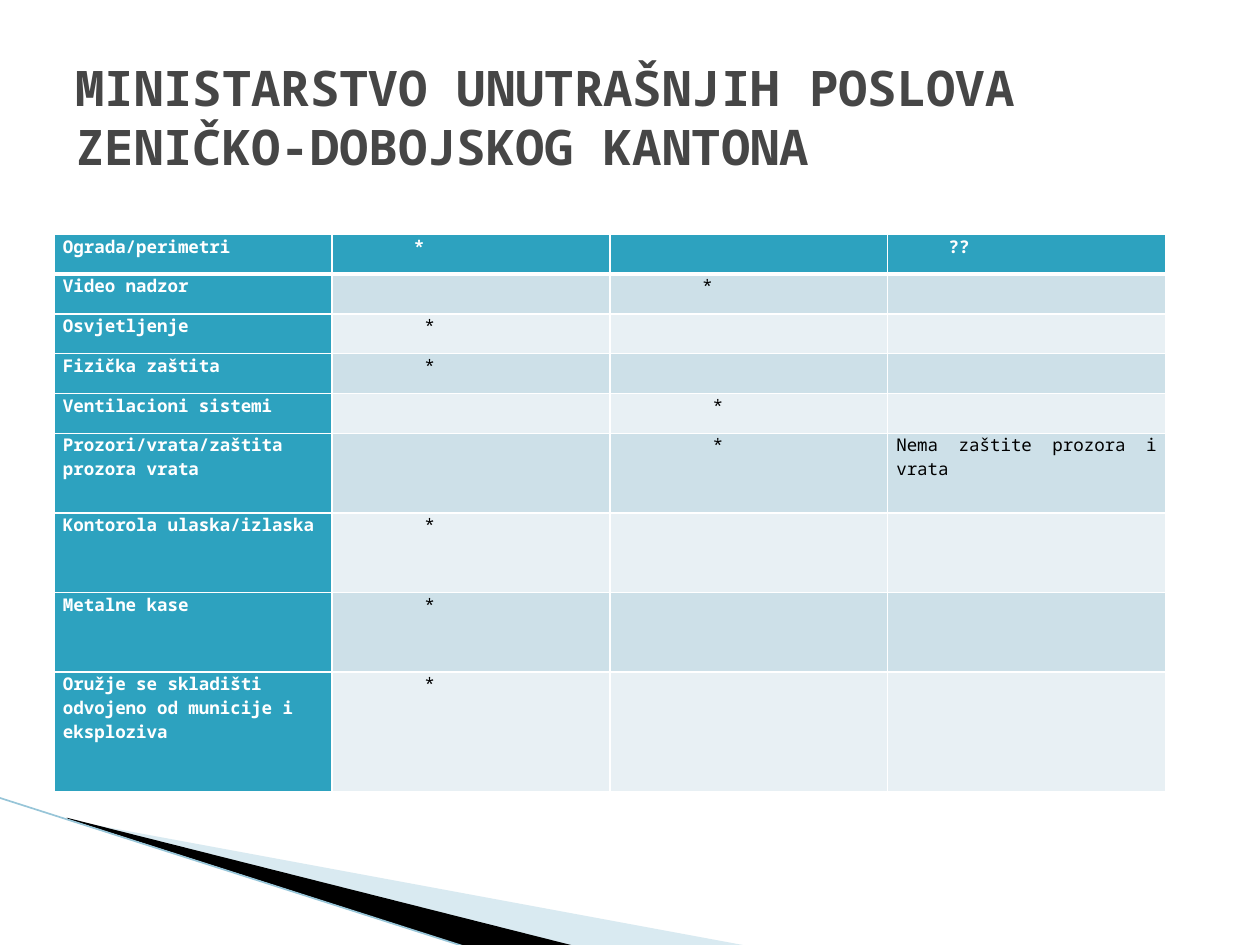
import lxml.etree
import pptx
import pptx.dml.color
import pptx.enum.shapes
import pptx.enum.text
import pptx.oxml.ns
import pptx.util

Inches = pptx.util.Inches
FONT = "Noto Sans Mono"
TEAL, WHITE, BLACK = "2DA2BF", "FFFFFF", "000000"
BANDS = ["E8F0F4", "CDE0E8"]


def color(value):
    return pptx.dml.color.RGBColor.from_string(value)


def add_border(cell, side, width):
    """Add a white border, width in points, on side L, R, T or B."""
    properties = cell._tc.get_or_add_tcPr()
    line = lxml.etree.SubElement(
        properties, pptx.oxml.ns.qn("a:ln" + side), w=str(pptx.util.Pt(width)))
    fill = lxml.etree.SubElement(line, pptx.oxml.ns.qn("a:solidFill"))
    lxml.etree.SubElement(fill, pptx.oxml.ns.qn("a:srgbClr"), val=WHITE)


presentation = pptx.Presentation()
presentation.slide_width = Inches(10)
presentation.slide_height = Inches(7.5)
slide = presentation.slides.add_slide(presentation.slide_layouts[6])

# Corner decoration
wedges = [
    ("A0CBDC", 40, [(0.55, 6.51), (5.95, 7.51), (4.56, 7.51), (0.55, 6.5)]),
    (BLACK, 100, [(0.53, 6.49), (4.57, 7.51), (3.72, 7.52), (0.54, 6.5)]),
]
for fill_color, opacity, points in wedges:
    corners = [(Inches(x), Inches(y)) for x, y in points]
    builder = slide.shapes.build_freeform(*corners[0])
    builder.add_line_segments(corners[1:])
    wedge = builder.convert_to_shape()
    wedge.shadow.inherit = False
    wedge.fill.solid()
    wedge.fill.fore_color.rgb = color(fill_color)
    wedge.line.fill.background()
    if opacity < 100:
        fill_element = wedge._element.spPr.find(".//" + pptx.oxml.ns.qn("a:srgbClr"))
        lxml.etree.SubElement(
            fill_element, pptx.oxml.ns.qn("a:alpha"), val=str(opacity * 1000))

edge = slide.shapes.add_connector(
    pptx.enum.shapes.MSO_CONNECTOR.STRAIGHT,
    Inches(-0.01), Inches(6.33), Inches(3.71), Inches(7.52))
edge.line.color.rgb = color("97C5D8")
edge.line.width = pptx.util.Pt(0.95)
lxml.etree.SubElement(edge._element.spPr, pptx.oxml.ns.qn("a:effectLst"))

# Security checklist: label, then {column: (text, indent in characters)}
checklist = [
    ("Ograda/perimetri", 1, {1: ("*", 7), 3: ("??", 5)}),
    ("Video nadzor", 1, {2: ("*", 8)}),
    ("Osvjetljenje", 1, {1: ("*", 8)}),
    ("Fizička zaštita", 1, {1: ("*", 8)}),
    ("Ventilacioni sistemi", 1, {2: ("*", 9)}),
    ("Prozori/vrata/zaštita prozora vrata", 2,
     {2: ("*", 9), 3: ("Nema zaštite prozora i vrata", 0)}),
    ("Kontorola ulaska/izlaska", 2, {1: ("*", 8)}),
    ("Metalne kase", 2, {1: ("*", 8)}),
    ("Oružje se skladišti odvojeno od municije i eksploziva", 3, {1: ("*", 8)}),
]
ROW_UNIT = 0.316
CHARACTER_WIDTH = 0.083
table = slide.shapes.add_table(
    len(checklist), 4, Inches(0.43), Inches(1.86), Inches(8.82), Inches(4.42)).table
for column in table.columns:
    column.width = Inches(8.82 / 4)

for row, (label, units, marks) in enumerate(checklist):
    table.rows[row].height = Inches(ROW_UNIT * units)
    entries = {0: (label, 0), **marks}
    for column in range(4):
        cell = table.cell(row, column)
        text, indent = entries.get(column, ("", 0))
        margins = {"margin_left": 0.07 + indent * CHARACTER_WIDTH,
                   "margin_right": 0.07, "margin_top": 0, "margin_bottom": 0}
        for name, value in margins.items():
            setattr(cell, name, Inches(value))
        widths = {"L": 1, "R": 1, "T": 3 if row == 1 else 1, "B": 3 if row == 0 else 1}
        for side, width in widths.items():
            add_border(cell, side, width)
        heading = row == 0 or column == 0
        cell.fill.solid()
        cell.fill.fore_color.rgb = color(TEAL if heading else BANDS[row % 2])

        paragraph = cell.text_frame.paragraphs[0]
        if not text:
            # Keeps an empty cell from stretching its row
            lxml.etree.SubElement(
                paragraph._p, pptx.oxml.ns.qn("a:endParaRPr"), sz="1000")
            continue
        last_row = row == len(checklist) - 1
        alignment = pptx.enum.text.PP_ALIGN
        paragraph.alignment = alignment.LEFT if last_row else alignment.JUSTIFY
        run = paragraph.add_run()
        run.text = text
        for name, value in {"name": FONT, "size": pptx.util.Pt(10), "bold": heading}.items():
            setattr(run.font, name, value)
        run.font.color.rgb = color(WHITE if heading else BLACK)

# Title
title = slide.shapes.add_textbox(Inches(0.5), Inches(0.3), Inches(9), Inches(1.25))
title.text_frame.word_wrap = True
title.text_frame.vertical_anchor = pptx.enum.text.MSO_ANCHOR.MIDDLE
run = title.text_frame.paragraphs[0].add_run()
run.text = "MINISTARSTVO UNUTRAŠNJIH POSLOVA ZENIČKO-DOBOJSKOG KANTONA"
for name, value in {"name": FONT, "size": pptx.util.Pt(28), "bold": True}.items():
    setattr(run.font, name, value)
run.font.color.rgb = color("464646")

presentation.save("out.pptx")
